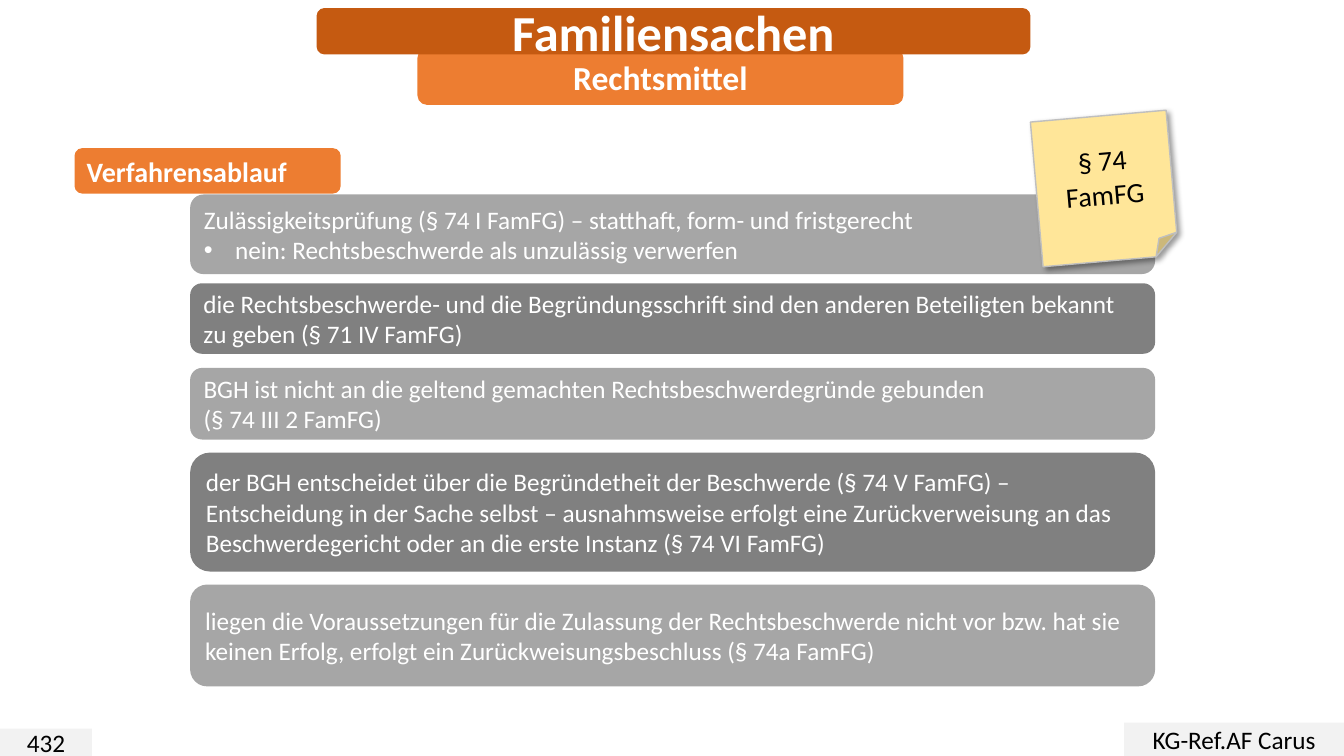
from lxml.etree import SubElement as Sub
from pptx import Presentation
from pptx.dml.color import RGBColor as RGB
from pptx.enum.shapes import MSO_SHAPE as SHAPE
from pptx.enum.text import MSO_ANCHOR as ANCHOR, PP_ALIGN as ALIGN
from pptx.oxml.ns import qn
from pptx.util import Inches, Pt

WHITE = RGB(0xFF, 0xFF, 0xFF)
BLACK = RGB(0, 0, 0)
ORANGE = RGB(0xED, 0x7D, 0x31)
RUST = RGB(0xC5, 0x5A, 0x11)
LIGHT = RGB(0xF2, 0xF2, 0xF2)
GREY = RGB(0xA6, 0xA6, 0xA6)
DARK_GREY = RGB(0x80, 0x80, 0x80)
YELLOW = RGB(0xFF, 0xE6, 0x99)
EDGE = RGB(0xBF, 0xBF, 0xBF)

STEP_LEFT, STEP_WIDTH = 14.15, 71.8
STEPS = [
    (25.73, 10.53, "Zulässigkeitsprüfung (§ 74 I FamFG) – statthaft, form- und fristgerecht\n"
                   "nein: Rechtsbeschwerde als unzulässig verwerfen"),
    (37.47, 9.33, "die Rechtsbeschwerde- und die Begründungsschrift sind den anderen "
                  "Beteiligten bekannt zu geben (§ 71 IV FamFG)"),
    (48.67, 9.47, "BGH ist nicht an die geltend gemachten Rechtsbeschwerdegründe gebunden\n"
                  "(§ 74 III 2 FamFG)"),
    (59.87, 15.73, "der BGH entscheidet über die Begründetheit der Beschwerde (§ 74 V FamFG) – "
                   "Entscheidung in der Sache selbst – ausnahmsweise erfolgt eine Zurückverweisung "
                   "an das Beschwerdegericht oder an die erste Instanz (§ 74 VI FamFG)"),
    (77.33, 13.47, "liegen die Voraussetzungen für die Zulassung der Rechtsbeschwerde nicht vor "
                   "bzw. hat sie keinen Erfolg, erfolgt ein Zurückweisungsbeschluss (§ 74a FamFG)"),
]


class Deck:
    """Slide builder whose lengths are percentages of the slide size."""

    font = "Calibri"

    def __init__(self):
        self.prs = Presentation()
        self.prs.slide_width, self.prs.slide_height = Inches(13.33), Inches(7.5)
        self.s = self.prs.slides.add_slide(self.prs.slide_layouts[6])

    def box(self, kind, x, y, w, h, text, fill, size=18, color=WHITE, bold=False,
            align=ALIGN.CENTER):
        across, down = self.prs.slide_width / 100, self.prs.slide_height / 100
        sp = self.s.shapes.add_shape(kind, int(x * across), int(y * down),
                                     int(w * across), int(h * down))
        sp.shadow.inherit = False
        sp.fill.solid()
        sp.fill.fore_color.rgb = fill
        sp.line.fill.background()
        tf = sp.text_frame
        tf.text = text
        tf.word_wrap = True
        tf.vertical_anchor = ANCHOR.MIDDLE
        for p in tf.paragraphs:
            p.alignment = align
            for r in p.runs:
                r.font.name, r.font.size, r.font.bold = self.font, Pt(size), bold
                r.font.color.rgb = color
        return sp

    def heading(self, x, y, w, h, text, fill, size, align=ALIGN.CENTER):
        return self.box(SHAPE.ROUNDED_RECTANGLE, x, y, w, h, text, fill, size,
                        bold=True, align=align)

    def footer(self, x, y, w, h, text):
        return self.box(SHAPE.RECTANGLE, x, y, w, h, text, LIGHT, color=BLACK)

    def step(self, y, h, text, fill):
        return self.box(SHAPE.ROUNDED_RECTANGLE, STEP_LEFT, y, STEP_WIDTH, h, text, fill,
                        align=ALIGN.LEFT)

    def bullet(self, p):
        pPr = p._p.get_or_add_pPr()
        pPr.set("marL", str(Inches(0.31)))
        pPr.set("indent", str(Inches(-0.31)))
        Sub(pPr, qn("a:buFont"), typeface="Arial")
        Sub(pPr, qn("a:buChar"), char="•")

    def note(self, x, y, w, h, text):
        sp = self.box(SHAPE.FOLDED_CORNER, x, y, w, h, text, YELLOW, 20, BLACK)
        sp.rotation = 355
        sp.line.color.rgb = EDGE
        sp.line.width = Pt(1)
        effects = sp._element.spPr.find(qn("a:effectLst"))
        shadow = Sub(effects, qn("a:outerShdw"), blurRad=str(Pt(4)), dist=str(Pt(3)),
                     dir=str(45 * 60000), algn="tl", rotWithShape="0")
        tint = Sub(shadow, qn("a:srgbClr"), val=str(BLACK))
        Sub(tint, qn("a:alpha"), val="40000")
        return sp


def main():
    deck = Deck()
    deck.heading(31.06, 6.4, 36.16, 7.47, "Rechtsmittel", ORANGE, 24)
    deck.heading(23.56, 1.07, 53.11, 6.13, "Familiensachen", RUST, 36)
    deck.footer(0, 96.4, 6.83, 3.6, "432")
    deck.footer(83.65, 95.6, 16.35, 4.4, "KG-Ref.AF Carus")
    deck.heading(5.55, 19.6, 19.8, 6, "Verfahrensablauf", ORANGE, 20, ALIGN.LEFT)
    steps = [deck.step(y, h, text, DARK_GREY if i % 2 else GREY)
             for i, (y, h, text) in enumerate(STEPS)]
    deck.bullet(steps[0].text_frame.paragraphs[1])
    deck.note(77.12, 15.33, 10.13, 19.2, "§ 74 FamFG")
    deck.prs.save("out.pptx")


if __name__ == "__main__":
    main()
